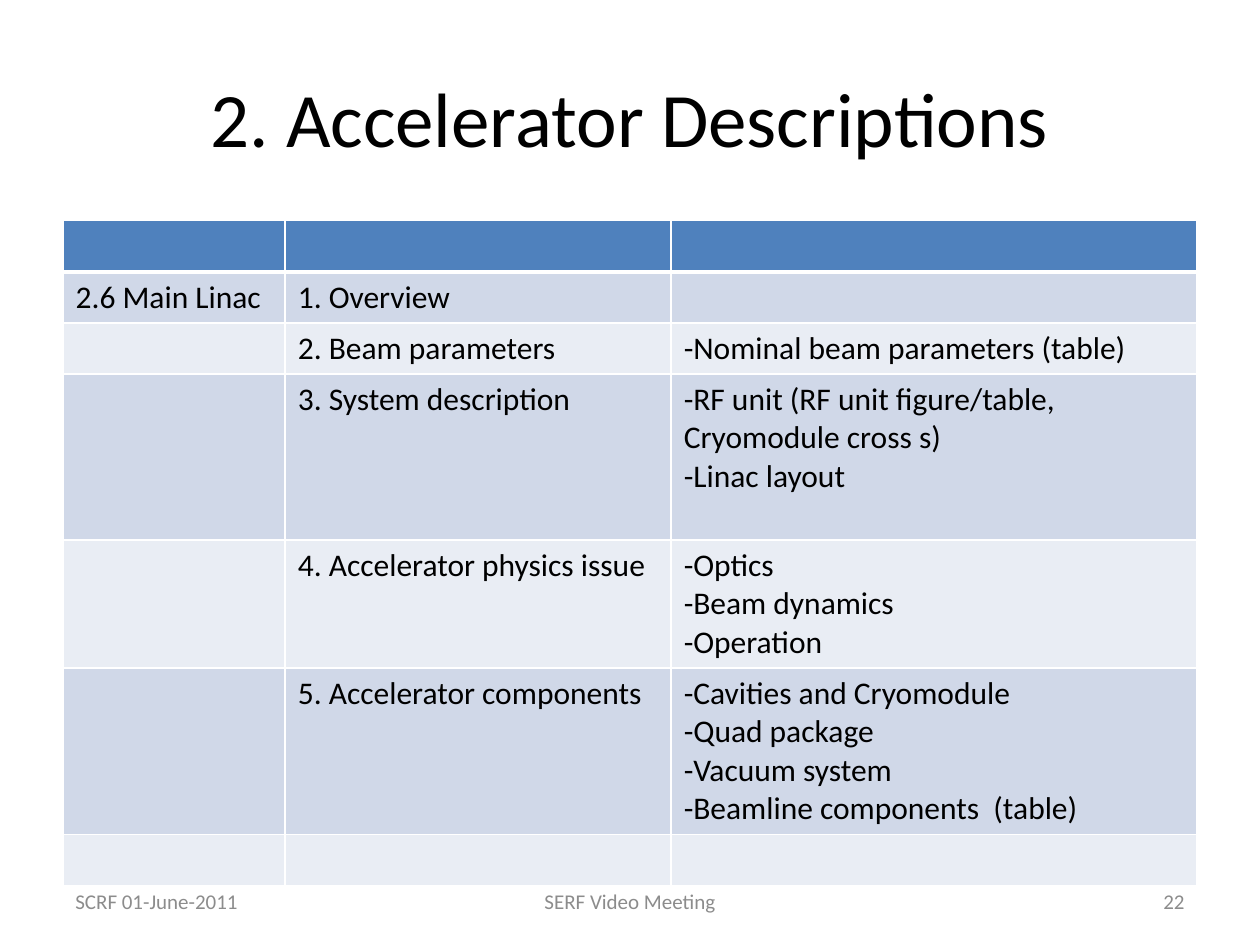
"""Build the accelerator descriptions slide with its table of main linac topics."""
from dataclasses import dataclass

from lxml.etree import SubElement
from pptx import Presentation
from pptx.dml.color import RGBColor as RGB
from pptx.enum.text import MSO_ANCHOR as ANCHOR, PP_ALIGN as ALIGN
from pptx.oxml.ns import qn
from pptx.util import Cm, Pt


@dataclass(frozen=True)
class Theme:
    font: str = "Calibri"
    title_size: int = 44
    body_size: int = 18
    footer_size: int = 12
    ink: str = "000000"
    muted: str = "8C8C8C"
    header: str = "4F81BD"
    bands: tuple = ("E9EDF4", "D0D8E8")
    rule: str = "FFFFFF"


theme = Theme()


def add_run(p, text, size, color):
    r = p.add_run()
    r.text = text
    r.font.name = theme.font
    r.font.size = Pt(size)
    r.font.color.rgb = RGB.from_string(color)


def add_border(cell, side, points):
    ln = SubElement(cell._tc.get_or_add_tcPr(), qn(f"a:ln{side}"), w=str(Pt(points)))
    fill = SubElement(ln, qn("a:solidFill"))
    SubElement(fill, qn("a:srgbClr"), val=theme.rule)


prs = Presentation()
prs.slide_width, prs.slide_height = Cm(25.4), Cm(19.05)
s = prs.slides.add_slide(prs.slide_layouts[6])

rows = [
    (1.03, "", "", []),
    (1.03, "2.6 Main Linac", "1. Overview", []),
    (1.03, "", "2. Beam parameters", ["-Nominal beam parameters (table)"]),
    (3.35, "", "3. System description",
     ["RF unit (RF unit figure/table, Cryomodule cross s)", "Linac layout"]),
    (2.57, "", "4. Accelerator physics issue",
     ["Optics", "Beam dynamics", "Operation"]),
    (3.35, "", "5. Accelerator components",
     ["Cavities and Cryomodule", "Quad package", "Vacuum system",
      "Beamline components  (table)"]),
    (1.03, "", "", []),
]
col_widths = [4.48, 7.78, 10.6]
table = s.shapes.add_table(len(rows), len(col_widths), Cm(1.27), Cm(4.45),
                           Cm(sum(col_widths)), Cm(sum(row[0] for row in rows))).table
for col, width in zip(table.columns, col_widths):
    col.width = Cm(width)

for i, (height, section, topic, details) in enumerate(rows):
    table.rows[i].height = Cm(height)
    for j, lines in enumerate(([section], [topic], details)):
        cell = table.cell(i, j)
        for side in "LRTB":
            under_header = (i, side) in ((0, "B"), (1, "T"))
            add_border(cell, side, 3 if under_header else 1)
        cell.fill.solid()
        cell.fill.fore_color.rgb = RGB.from_string(theme.bands[i % 2] if i else theme.header)
        tf = cell.text_frame
        for n, line in enumerate(filter(None, lines)):
            p = tf.add_paragraph() if n else tf.paragraphs[0]
            if len(lines) > 1:
                pPr = p._p.get_or_add_pPr()
                pPr.set("marL", "0")
                pPr.set("indent", "0")
                SubElement(pPr, qn("a:buFont"), typeface=theme.font)
                SubElement(pPr, qn("a:buChar"), char="-")
            add_run(p, line, theme.body_size, theme.ink)

title_style = (theme.title_size, theme.ink)
footer_style = (theme.footer_size, theme.muted)
texts = [
    ("2. Accelerator Descriptions", 1.27, 0.76, 22.86, 3.18, ALIGN.CENTER, title_style),
    ("SCRF 01-June-2011", 1.27, 17.65, 5.93, 1.02, ALIGN.LEFT, footer_style),
    ("SERF Video Meeting", 8.68, 17.65, 8.04, 1.02, ALIGN.CENTER, footer_style),
    ("22", 18.2, 17.65, 5.93, 1.02, ALIGN.RIGHT, footer_style),
]
for text, left, top, width, height, align, style in texts:
    sp = s.shapes.add_textbox(Cm(left), Cm(top), Cm(width), Cm(height))
    tf = sp.text_frame
    tf.word_wrap = True
    tf.vertical_anchor = ANCHOR.MIDDLE
    p = tf.paragraphs[0]
    p.alignment = align
    add_run(p, text, *style)

prs.save("out.pptx")
